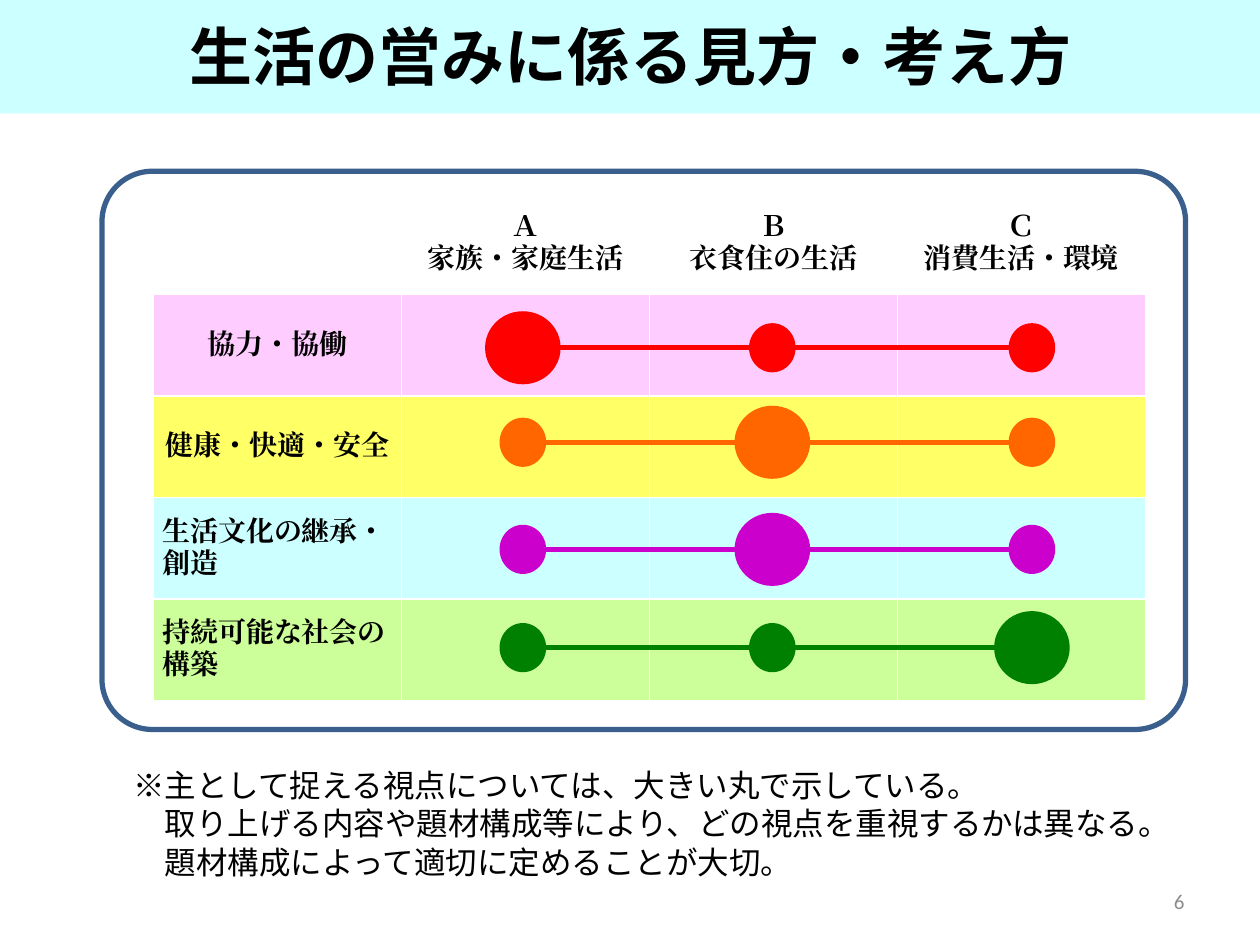
import pptx
import pptx.dml.color
import pptx.enum.shapes
import pptx.enum.text
import pptx.oxml
import pptx.oxml.ns
import pptx.util
from pptx.util import Inches

JAPANESE_FONT = "Noto Sans CJK JP"
ALIGN = pptx.enum.text.PP_ALIGN
MIDDLE = pptx.enum.text.MSO_ANCHOR.MIDDLE
SHAPES = pptx.enum.shapes.MSO_SHAPE

HEADINGS = ["", "Ａ\n家族・家庭生活", "Ｂ\n衣食住の生活", "Ｃ\n消費生活・環境"]
VIEWPOINTS = [
    ("協力・協働", ALIGN.CENTER, "FFCCFF", "FF0000", 2.76, 0),
    ("健康・快適・安全", ALIGN.CENTER, "FFFF66", "FF6600", 3.51, 1),
    ("生活文化の継承・創造", ALIGN.LEFT, "CCFFFF", "CC00CC", 4.36, 1),
    ("持続可能な社会の構築", ALIGN.LEFT, "CCFF99", "008000", 5.14, 2),
]
CIRCLE_CENTERS = [4.15, 6.13, 8.19]
LARGE_CIRCLE = (0.6, 0.58)
SMALL_CIRCLE = (0.37, 0.39)
NOTES = [
    "※主として捉える視点については、大きい丸で示している。",
    "取り上げる内容や題材構成等により、どの視点を重視するかは異なる。",
    "題材構成によって適切に定めることが大切。",
]


def color(value):
    return pptx.dml.color.RGBColor.from_string(value)


def fill(target, value):
    target.fill.solid()
    target.fill.fore_color.rgb = color(value)


def format_text(text_frame, size, font, value="000000", bold=False, align=ALIGN.LEFT):
    for paragraph in text_frame.paragraphs:
        paragraph.alignment = align
        for run in paragraph.runs:
            run.font.size = pptx.util.Pt(size)
            run.font.name = font
            run.font.bold = bold
            run.font.color.rgb = color(value)
            east_asian = pptx.oxml.parse_xml(
                f'<a:ea {pptx.oxml.ns.nsdecls("a")} typeface="{font}"/>')
            run.font._element.find(pptx.oxml.ns.qn("a:latin")).addnext(east_asian)


def add_title(slide, left, top, width, height):
    title = slide.shapes.title
    title.left, title.top = Inches(left), Inches(top)
    title.width, title.height = Inches(width), Inches(height)
    fill(title, "CCFFFF")
    title.text_frame.text = "生活の営みに係る見方・考え方"
    title.text_frame.vertical_anchor = MIDDLE
    format_text(title.text_frame, 36, JAPANESE_FONT, bold=True, align=ALIGN.CENTER)


def add_panel(slide, left, top, width, height):
    panel = slide.shapes.add_shape(
        SHAPES.ROUNDED_RECTANGLE, Inches(left), Inches(top), Inches(width), Inches(height))
    panel.adjustments[0] = 0.09
    panel.shadow.inherit = False
    panel.fill.background()
    panel.line.color.rgb = color("3A5F8C")
    panel.line.width = pptx.util.Pt(3)


def fill_cell(cell, text, background, align):
    fill(cell, background)
    cell.vertical_anchor = MIDDLE
    cell.margin_left = cell.margin_right = Inches(0.07)
    cell.margin_top = cell.margin_bottom = 0
    cell.text_frame.text = text
    format_text(cell.text_frame, 16, "Cambria", bold=True, align=align)


def add_viewpoint_table(slide, left, top, width, height):
    table = slide.shapes.add_table(
        len(VIEWPOINTS) + 1, len(HEADINGS),
        Inches(left), Inches(top), Inches(width), Inches(height)).table
    for column, heading in enumerate(HEADINGS):
        fill_cell(table.cell(0, column), heading, "FFFFFF", ALIGN.CENTER)
    for row, (label, align, background, *_) in enumerate(VIEWPOINTS, start=1):
        for column in range(len(HEADINGS)):
            fill_cell(table.cell(row, column), "" if column else label, background, align)


def add_circle_row(slide, center_y, value, large_index):
    line = slide.shapes.add_connector(
        pptx.enum.shapes.MSO_CONNECTOR.STRAIGHT,
        Inches(CIRCLE_CENTERS[0]), Inches(center_y),
        Inches(CIRCLE_CENTERS[-1]), Inches(center_y))
    line.line.color.rgb = color(value)
    line.line.width = pptx.util.Pt(3)
    line._element.spPr.append(
        pptx.oxml.parse_xml(f'<a:effectLst {pptx.oxml.ns.nsdecls("a")}/>'))
    for index, center_x in enumerate(CIRCLE_CENTERS):
        width, height = LARGE_CIRCLE if index == large_index else SMALL_CIRCLE
        circle = slide.shapes.add_shape(
            SHAPES.OVAL, Inches(center_x - width / 2), Inches(center_y - height / 2),
            Inches(width), Inches(height))
        circle.shadow.inherit = False
        fill(circle, value)
        circle.line.fill.background()


def add_notes(slide, left, top, width, height):
    text_frame = slide.shapes.add_textbox(
        Inches(left), Inches(top), Inches(width), Inches(height)).text_frame
    text_frame.word_wrap = True
    text_frame.text = "\n".join(NOTES)
    format_text(text_frame, 18, JAPANESE_FONT)
    for index, paragraph in enumerate(text_frame.paragraphs):
        paragraph.line_spacing = pptx.util.Pt(21.8)
        properties = paragraph._p.get_or_add_pPr()
        properties.set("marL", str(Inches(0.25)))
        properties.set("indent", str(0 if index else -Inches(0.25)))


def add_page_number(slide, left, top, width, height):
    text_frame = slide.shapes.add_textbox(
        Inches(left), Inches(top), Inches(width), Inches(height)).text_frame
    text_frame.word_wrap = True
    text_frame.vertical_anchor = MIDDLE
    text_frame.text = "6"
    format_text(text_frame, 12, "Calibri", "8C8C8C", align=ALIGN.RIGHT)


def main():
    presentation = pptx.Presentation()
    presentation.slide_width, presentation.slide_height = Inches(10), Inches(7.5)
    slide = presentation.slides.add_slide(presentation.slide_layouts[5])
    add_title(slide, 0, -0.03, 10, 0.93)
    add_viewpoint_table(slide, 1.22, 1.53, 7.87, 4.03)
    add_panel(slide, 0.81, 1.36, 8.6, 4.43)
    for _, _, _, circle_color, center_y, large_index in VIEWPOINTS:
        add_circle_row(slide, center_y, circle_color, large_index)
    add_notes(slide, 0.96, 6.03, 8.6, 1.01)
    add_page_number(slide, 7.17, 6.95, 2.33, 0.4)
    presentation.save("out.pptx")


if __name__ == "__main__":
    main()
